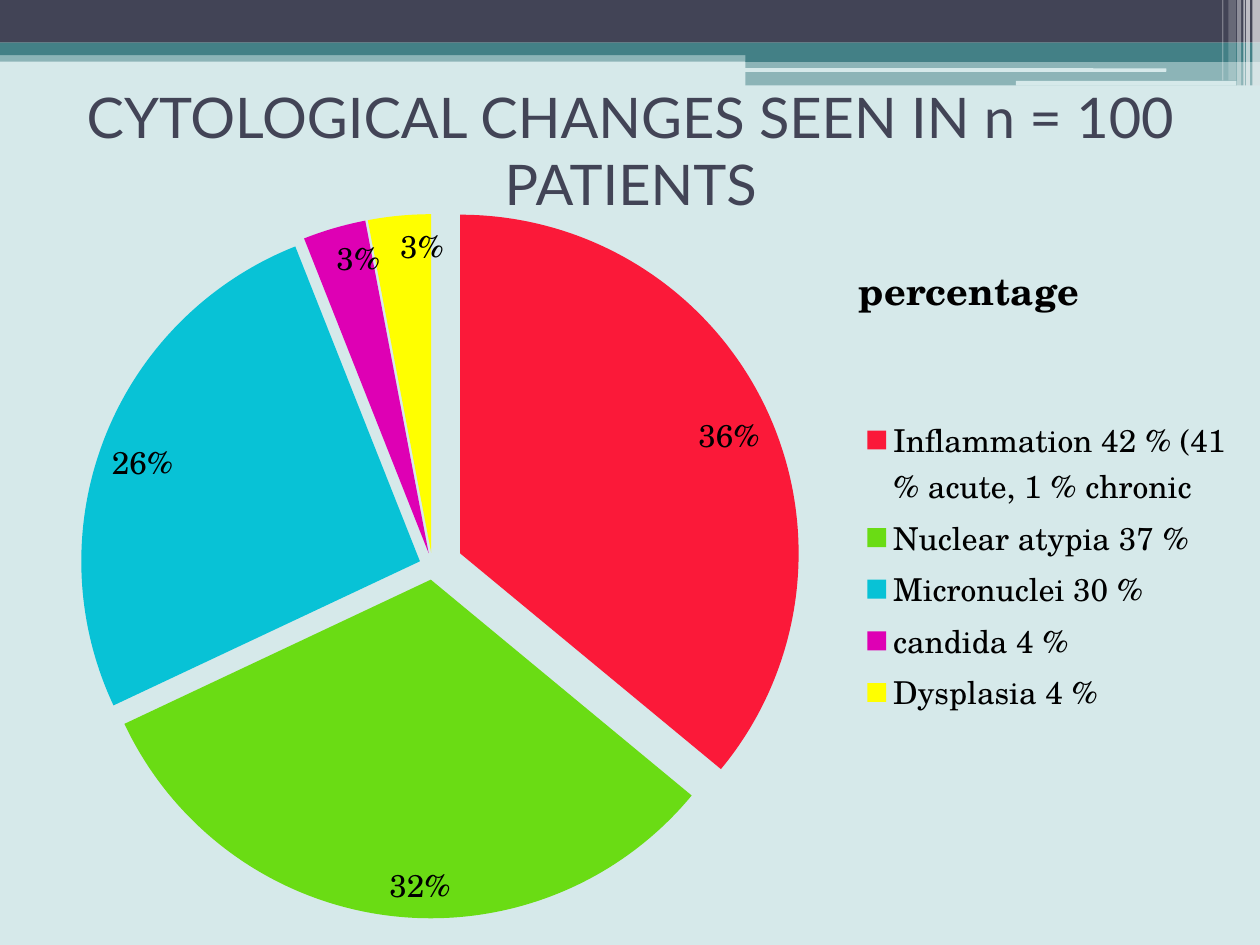
from lxml.etree import SubElement
from pptx import Presentation
from pptx.chart.data import CategoryChartData
from pptx.dml.color import RGBColor
from pptx.enum.chart import XL_CHART_TYPE as ChartType, XL_LABEL_POSITION as LabelPos, XL_LEGEND_POSITION as LegendPos
from pptx.enum.shapes import MSO_SHAPE as Preset
from pptx.enum.text import MSO_ANCHOR as Anchor, PP_ALIGN as Align
from pptx.oxml import parse_xml
from pptx.oxml.ns import nsdecls, qn
from pptx.util import Pt

COLORS = {
    "background": "D6E9EA", "navy": "424456", "teal": "438086", "white": "FFFFFF", "black": "000000",
    "inflammation": "FB1939", "atypia": "6ADC14", "micronuclei": "08C2D6",
    "candida": "DE00B4", "dysplasia": "FFFF00",
}
FINDINGS = [
    ("Inflammation 42 % (41 % acute, 1 % chronic", 36, "inflammation"),
    ("Nuclear atypia 37 %", 32, "atypia"),
    ("Micronuclei 30 %", 26, "micronuclei"),
    ("candida 4 %", 3, "candida"),
    ("Dysplasia 4 %", 3, "dysplasia"),
]
BANDS = [
    (0, 28.8, 720, 6.5, "teal", 50), (0, 0, 720, 24.4, "navy", 100),
    (0, 24.4, 720, 7.2, "teal", 100), (426, 28.2, 294, 7.2, "teal", 100),
    (426, 34.8, 294, 14, "teal", 50),
]
GROOVES = [(425.5, 39, 241, 2), (580.5, 46.2, 126, 2.7)]
STRIPES = [
    (715.7, 4.3, 49, 65), (712, 2.2, 49, 65), (710.6, 0.8, 49, 60),
    (707, 2.2, 49, 40), (702, 4.3, 46, 20), (698.4, 0.8, 46, 30),
]


def rgb(name):
    """Return the named palette colour."""
    return RGBColor.from_string(COLORS[name])


def add_band(slide, left, top, width, height, color, opacity=100, preset=Preset.RECTANGLE):
    """Add a borderless bar with the given opacity in percent."""
    band = slide.shapes.add_shape(preset, Pt(left), Pt(top), Pt(width), Pt(height))
    band.shadow.inherit = False
    band.line.fill.background()
    band.fill.solid()
    band.fill.fore_color.rgb = rgb(color)
    if opacity < 100:
        tint = band.fill._xPr.find(qn("a:solidFill"))[0]
        SubElement(tint, qn("a:alpha")).set("val", str(opacity * 1000))
    return band


def add_header(slide):
    """Draw the bands, grooves and stripes along the top edge."""
    for band in BANDS:
        add_band(slide, *band)
    for groove in GROOVES:
        add_band(slide, *groove, "background", preset=Preset.ROUNDED_RECTANGLE)
    for left, width, height, opacity in STRIPES:
        add_band(slide, left, 0, width, height, "white", opacity)


def style_font(font, size, color, name, bold=False):
    """Set size, colour, face and weight of a font."""
    font.size, font.name, font.bold = Pt(size), name, bold
    font.color.rgb = rgb(color)


def add_heading(slide, wording):
    """Add the centred slide heading."""
    heading = slide.shapes.add_textbox(Pt(36.5), Pt(43.2), Pt(648), Pt(84.2))
    frame = heading.text_frame
    frame.word_wrap = True
    frame.vertical_anchor = Anchor.MIDDLE
    frame.text = wording
    line = frame.paragraphs[0]
    line.alignment = Align.CENTER
    style_font(line.runs[0].font, 32, "navy", "Lato")


def place(part, index, inner=False, **fractions):
    """Give a chart part a manual layout in fractions of the chart."""
    for old in part.findall(qn("c:layout")):
        part.remove(old)
    target = '<c:layoutTarget val="inner"/>' if inner else ""
    modes = "".join(f'<c:{side}Mode val="edge"/>' for side in "xy")
    places = "".join(f'<c:{key} val="{value}"/>' for key, value in fractions.items())
    part.insert(index, parse_xml(
        f'<c:layout {nsdecls("c")}><c:manualLayout>{target}{modes}{places}</c:manualLayout></c:layout>'))


def explode(successor, percent):
    """Insert a slice offset ahead of the given element."""
    successor.addprevious(parse_xml(f'<c:explosion {nsdecls("c")} val="{percent}"/>'))


def color_slices(series):
    """Colour and pull apart the slices, the first one furthest."""
    for index, (_, _, color) in enumerate(FINDINGS):
        fill = series.points[index].format.fill
        fill.solid()
        fill.fore_color.rgb = rgb(color)
    slices = series._element.findall(qn("c:dPt"))
    explode(slices[0], 4)
    explode(slices[0].find(qn("c:spPr")), 9)


def add_pie(slide):
    """Add the pie chart with its title, legend and percent labels."""
    data = CategoryChartData()
    data.categories = [label for label, _, _ in FINDINGS]
    data.add_series("percentage", [share for _, share, _ in FINDINGS])
    chart = slide.shapes.add_chart(
        ChartType.PIE, Pt(14.4), Pt(122.4), Pt(694.8), Pt(402.5), data).chart
    style_font(chart.font, 18, "black", "TeX Gyre Schola")

    chart.has_title = True
    title = chart.chart_title
    title.text_frame.text = "percentage"
    style_font(title.text_frame.paragraphs[0].runs[0].font, 21.6, "black", "TeX Gyre Schola", True)
    place(title._element, 1, x=0.68, y=0.05)

    chart.has_legend = True
    legend = chart.legend
    legend.position = LegendPos.RIGHT
    legend.include_in_layout = False
    place(legend._element, 1, x=0.68, y=0.28, w=0.32, h=0.44)

    pie = chart.plots[0]
    pie.vary_by_categories = True
    place(chart._chartSpace.chart.plotArea, 0, True, x=0.025, y=0, w=0.62, h=1)
    color_slices(pie.series[0])
    pie.has_data_labels = True
    labels = pie.data_labels
    labels.show_percentage, labels.show_value = True, False
    labels.number_format, labels.number_format_is_linked = "0%", False
    labels.position = LabelPos.INSIDE_END
    style_font(labels.font, 18, "black", "TeX Gyre Schola")


def main():
    """Build the slide and save it."""
    deck = Presentation()
    deck.slide_width, deck.slide_height = Pt(720), Pt(540)
    slide = deck.slides.add_slide(deck.slide_layouts[6])
    slide.background.fill.solid()
    slide.background.fill.fore_color.rgb = rgb("background")
    add_header(slide)
    add_heading(slide, "CYTOLOGICAL CHANGES SEEN IN n = 100 PATIENTS")
    add_pie(slide)
    deck.save("out.pptx")


if __name__ == "__main__":
    main()
